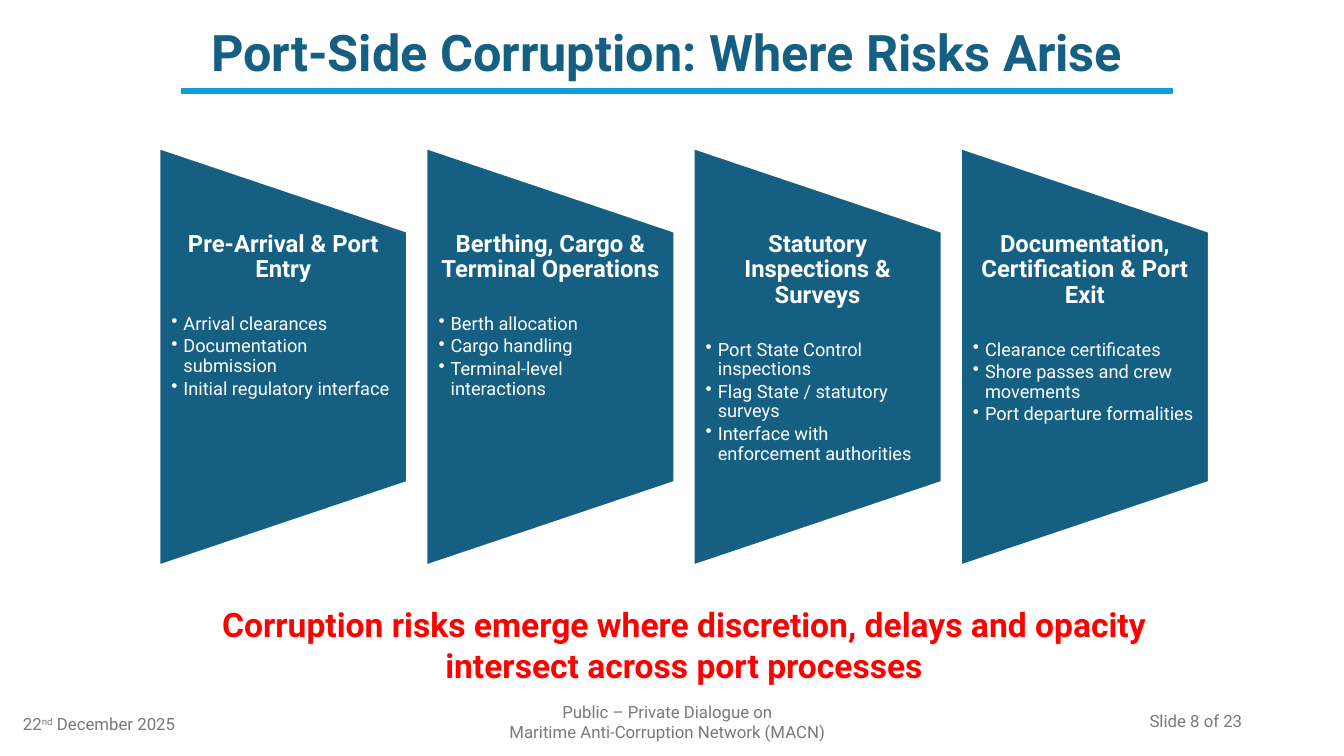
from lxml.etree import SubElement
from pptx import Presentation
from pptx.dml.color import RGBColor
from pptx.enum.shapes import MSO_CONNECTOR, MSO_SHAPE
from pptx.enum.text import MSO_ANCHOR, PP_ALIGN
from pptx.oxml.ns import qn
from pptx.util import Inches, Pt

FONT = "Roboto"
NAVY, SKY, RED, GRAY, WHITE = "156082", "0F9ED5", "FF0000", "797979", "FFFFFF"

STAGES = [
    ("Pre-Arrival & Port Entry",
     ["Arrival clearances", "Documentation submission", "Initial regulatory interface"]),
    ("Berthing, Cargo & Terminal Operations",
     ["Berth allocation", "Cargo handling", "Terminal-level interactions"]),
    ("Statutory Inspections & Surveys",
     ["Port State Control inspections", "Flag State / statutory surveys",
      "Interface with enforcement authorities"]),
    ("Documentation, Certification & Port Exit",
     ["Clearance certificates", "Shore passes and crew movements",
      "Port departure formalities"]),
]


def rgb(value):
    return RGBColor.from_string(value)


def add_frame(slide, left, top, width, height, anchor=MSO_ANCHOR.MIDDLE):
    frame = slide.shapes.add_textbox(
        Inches(left), Inches(top), Inches(width), Inches(height)).text_frame
    frame.word_wrap = True
    frame.vertical_anchor = anchor
    return frame


def write(frame, text, size=12, color=GRAY, bold=False, align=PP_ALIGN.LEFT,
          line_spacing=1.0, after=0, bullet=False):
    """Fill the empty first paragraph, or append one; text may be a list of runs."""
    paragraph = frame.paragraphs[0]
    if paragraph.runs:
        paragraph = frame.add_paragraph()
    if bullet:
        properties = paragraph._p.get_or_add_pPr()
        properties.set("marL", str(Inches(0.12)))
        properties.set("indent", str(-Inches(0.12)))
        SubElement(properties, qn("a:buChar")).set("char", "•")
    paragraph.alignment = align
    paragraph.line_spacing = line_spacing
    paragraph.space_after = Pt(after)
    for part in [text] if isinstance(text, str) else text:
        run = paragraph.add_run()
        run.text = part
        run.font.name = FONT
        run.font.size = Pt(size)
        run.font.bold = bold
        run.font.color.rgb = rgb(color)
    return paragraph


def add_heading(slide, left, top, width, height):
    title = add_frame(slide, left, top, width, height)
    write(title, "Port-Side Corruption: Where Risks Arise", size=36, color=NAVY,
          bold=True, align=PP_ALIGN.CENTER, line_spacing=0.9)
    # Rule under the title
    rule_left, rule_top = left + 0.52, top + 0.76
    rule = slide.shapes.add_connector(
        MSO_CONNECTOR.STRAIGHT, Inches(rule_left), Inches(rule_top),
        Inches(rule_left + 9.83), Inches(rule_top))
    rule.line.color.rgb = rgb(SKY)
    rule.line.width = Pt(4.5)
    SubElement(rule._element.spPr, qn("a:effectLst"))


def add_stage(slide, left, top, width, height, heading, risks):
    # Trapezoid, turned a quarter about the centre of its box
    panel = slide.shapes.add_shape(
        MSO_SHAPE.FLOWCHART_MANUAL_OPERATION,
        Inches(left + (width - height) / 2), Inches(top + (height - width) / 2),
        Inches(height), Inches(width))
    panel.rotation = 270
    panel.shadow.inherit = False
    panel.fill.solid()
    panel.fill.fore_color.rgb = rgb(NAVY)
    panel.line.color.rgb = rgb(WHITE)
    panel.line.width = Pt(1.5)
    # Heading and risks, between the slanted edges
    body = add_frame(slide, left, top + height / 5, width, height * 0.6, MSO_ANCHOR.TOP)
    body.margin_left = body.margin_right = Inches(0.12)
    body.margin_top = body.margin_bottom = 0
    write(body, heading, size=17, color=WHITE, bold=True, align=PP_ALIGN.CENTER,
          line_spacing=0.9, after=22.5)
    for risk in risks:
        write(body, risk, size=13, color=WHITE, line_spacing=0.9, after=2, bullet=True)


def add_stages(slide, left, top, width, height):
    panel_width = 2.46
    step = (width - panel_width) / (len(STAGES) - 1)
    for index, (heading, risks) in enumerate(STAGES):
        add_stage(slide, left + index * step, top, panel_width, height, heading, risks)


def add_takeaway(slide, left, top, width, height):
    takeaway = add_frame(slide, left, top, width, height)
    write(takeaway, "Corruption risks emerge where discretion, delays and opacity "
          "intersect across port processes", size=24, color=RED, bold=True,
          align=PP_ALIGN.CENTER)


def add_footer(slide, left, top, width, height):
    # Date with raised ordinal
    date = write(add_frame(slide, left, top + 0.03, 3, height),
                 ["22", "nd", " December 2025"])
    date.runs[1]._r.get_or_add_rPr().set("baseline", "30000")
    # Event
    event = add_frame(slide, left + 4.24, top + 0.01, 4.5, height)
    for line in ("Public – Private Dialogue on", "Maritime Anti-Corruption Network (MACN)"):
        write(event, line, align=PP_ALIGN.CENTER)
    # Slide count
    write(add_frame(slide, left + width - 3, top, 3, height), "Slide 8 of 23",
          align=PP_ALIGN.RIGHT)


def main():
    deck = Presentation()
    deck.slide_width, deck.slide_height = Inches(13.33), Inches(7.5)
    slide = deck.slides.add_slide(deck.slide_layouts[6])
    add_heading(slide, 1.28, 0.14, 10.67, 0.81)
    add_stages(slide, 1.58, 1.47, 10.41, 4.14)
    add_takeaway(slide, 1.45, 5.89, 10.67, 1.01)
    add_footer(slide, 0.13, 6.95, 12.29, 0.4)
    deck.save("out.pptx")


if __name__ == "__main__":
    main()
